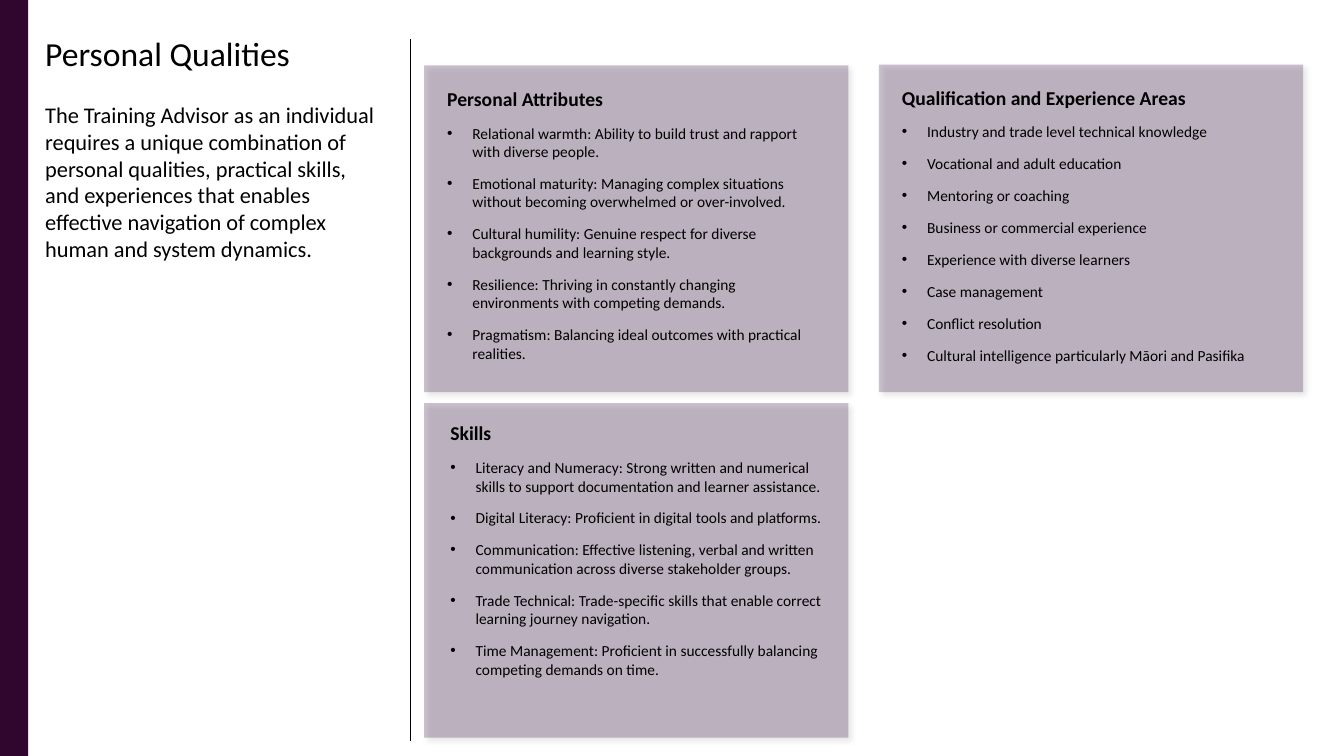
"""Build the Personal Qualities slide: an introduction beside three bulleted cards."""
from lxml.etree import SubElement
from pptx import Presentation
from pptx.dml.color import RGBColor
from pptx.enum.shapes import MSO_CONNECTOR as CONN, MSO_SHAPE as SHAPE
from pptx.oxml import parse_xml
from pptx.oxml.ns import nsdecls, qn
from pptx.util import Cm, Pt

BAR = RGBColor(0x30, 0x06, 0x2E)
CARD = RGBColor(0x30, 0x06, 0x3E)
BLACK = RGBColor(0, 0, 0)
FONT = "Calibri"
CARD_W = 10.69
SHADOW = (
    f'<a:effectLst {nsdecls("a")}><a:outerShdw blurRad="50800" dist="38100" dir="2700000" '
    'algn="tl" rotWithShape="0"><a:srgbClr val="000000"><a:alpha val="40000"/>'
    "</a:srgbClr></a:outerShdw></a:effectLst>"
)

CARDS = [
    ((10.69, 1.65, 8.23), (11.02, 2.06, 9.88, 7.26), "Personal Attributes", [
        "Relational warmth: Ability to build trust and rapport with diverse people.",
        "Emotional maturity: Managing complex situations without becoming overwhelmed or over-involved.",
        "Cultural humility: Genuine respect for diverse backgrounds and learning style.",
        "Resilience: Thriving in constantly changing environments with competing demands.",
        "Pragmatism: Balancing ideal outcomes with practical realities.",
    ]),
    ((22.15, 1.63, 8.25), (22.48, 2.03, 9.88, 7.67), "Qualification and Experience Areas", [
        "Industry and trade level technical knowledge",
        "Vocational and adult education",
        "Mentoring or coaching",
        "Business or commercial experience",
        "Experience with diverse learners",
        "Case management",
        "Conflict resolution",
        "Cultural intelligence particularly Māori and Pasifika",
    ]),
    ((10.69, 10.16, 8.43), (11.1, 10.49, 10.11, 6.17), "Skills", [
        "Literacy and Numeracy: Strong written and numerical skills to support documentation and learner assistance.",
        "Digital Literacy: Proficient in digital tools and platforms.",
        "Communication: Effective listening, verbal and written communication across diverse stakeholder groups.",
        "Trade Technical: Trade-specific skills that enable correct learning journey navigation.",
        "Time Management: Proficient in successfully balancing competing demands on time.",
    ]),
]


def add_rect(left, top, width, height, color):
    sp = s.shapes.add_shape(SHAPE.RECTANGLE, Cm(left), Cm(top), Cm(width), Cm(height))
    sp.fill.solid()
    sp.fill.fore_color.rgb = color
    sp.line.fill.background()
    return sp


def format_text(p, size, bold=False):
    for r in p.runs:
        r.font.name = FONT
        r.font.size = Pt(size)
        r.font.bold = bold
        r.font.color.rgb = BLACK


prs = Presentation()
prs.slide_width, prs.slide_height = Cm(33.87), Cm(19.05)
s = prs.slides.add_slide(prs.slide_layouts[6])

bar = add_rect(0, 0, 0.71, 19.05, BAR)
bar.shadow.inherit = False

intro = s.shapes.add_textbox(Cm(1.14), Cm(0.84), Cm(8.51), Cm(5.82))
tf = intro.text_frame
tf.word_wrap = True
tf.margin_left = tf.margin_top = tf.margin_right = tf.margin_bottom = 0
title = tf.paragraphs[0]
title.text = "Personal Qualities"
format_text(title, 24)
body = tf.add_paragraph()
body.text = (
    "The Training Advisor as an individual requires a unique combination of personal "
    "qualities, practical skills, and experiences that enables effective navigation of "
    "complex human and system dynamics."
)
body.space_before = Pt(19.5)
format_text(body, 16)

for (left, top, height), text_box, heading, bullets in CARDS:
    card = add_rect(left, top, CARD_W, height, CARD)
    color = card.fill._xPr.find(qn("a:solidFill"))[0]
    SubElement(color, qn("a:alpha"), val="24000")
    card._element.spPr.append(parse_xml(SHADOW))

    tf = s.shapes.add_textbox(*map(Cm, text_box)).text_frame
    tf.word_wrap = True
    p = tf.paragraphs[0]
    p.text = heading
    p.space_after = Pt(4.8)
    format_text(p, 14, bold=True)
    for bullet in bullets:
        p = tf.add_paragraph()
        p.text = bullet
        p.space_before = p.space_after = Pt(4.8)
        pPr = p._p.get_or_add_pPr()
        pPr.set("marL", str(Cm(0.635)))
        pPr.set("indent", str(-Cm(0.635)))
        SubElement(pPr, qn("a:buFont"), typeface="Arial")
        SubElement(pPr, qn("a:buChar"), char="•")
        format_text(p, 11)

divider = s.shapes.add_connector(CONN.STRAIGHT, Cm(10.34), Cm(0.99), Cm(10.34), Cm(18.67))
divider.line.color.rgb = BLACK
divider.line.width = Pt(0.75)
SubElement(divider._element.spPr, qn("a:effectLst"))

prs.save("out.pptx")
